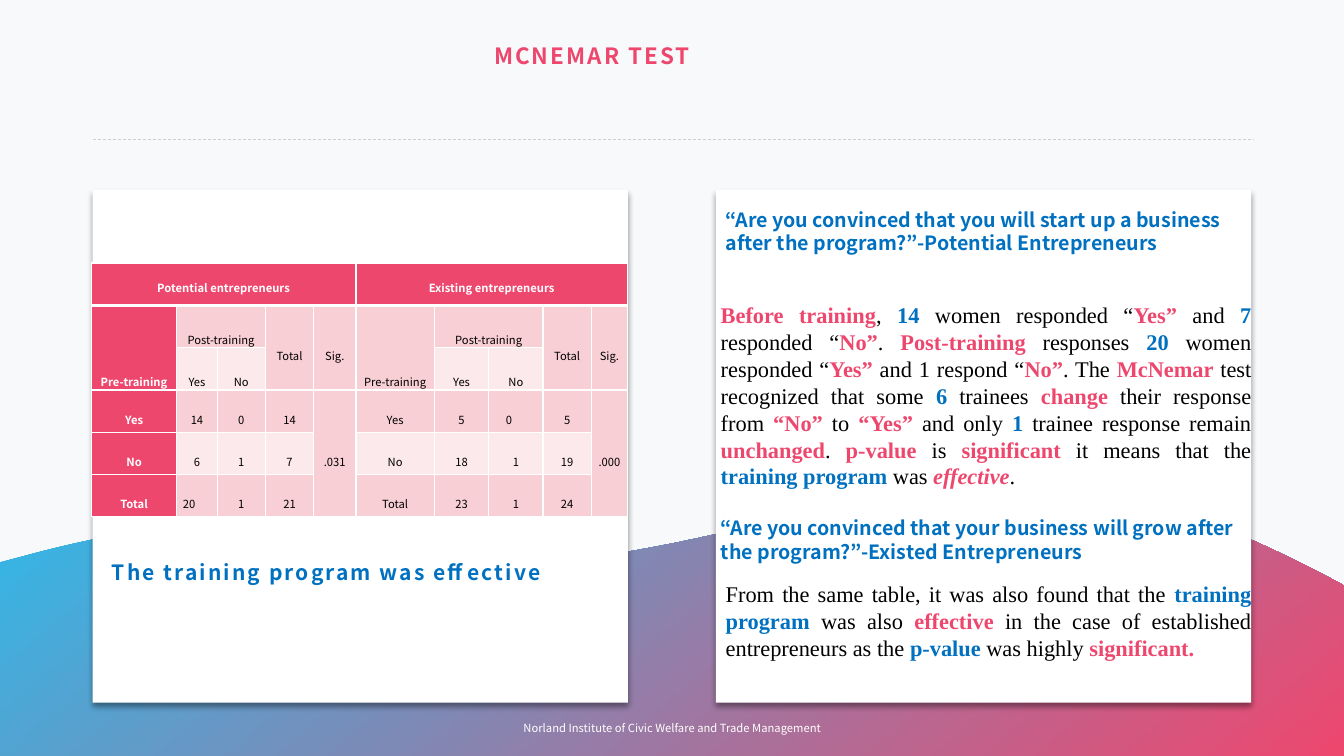
from dataclasses import dataclass

from lxml import etree
from pptx import Presentation
from pptx import util as u
from pptx.dml.color import RGBColor
from pptx.enum import dml, shapes, text
from pptx.oxml import parse_xml
from pptx.oxml.ns import nsdecls, qn


@dataclass(frozen=True)
class Theme:
    sans: str = "Noto Sans CJK JP"
    serif: str = "Times New Roman"
    pink: str = "EE476E"
    blue: str = "0070C0"
    sky: str = "2DBAEA"
    rose: str = "F8CFD5"
    blush: str = "FCE9EB"
    white: str = "FFFFFF"
    black: str = "000000"
    rule: str = "D0CECE"
    backdrop: str = "F8F9FB"
    small: int = 8
    heading: int = 14
    callout: int = 15
    large: int = 16


THEME = Theme()
WIDTH, HEIGHT = u.Inches(13.33), u.Inches(7.5)
ALIGN = text.PP_ALIGN
ANCHOR = text.MSO_ANCHOR

CARD_LEFTS = (6.9, 53.26)
WAVE_START = (0, 74.4)
WAVE_CURVES = [
    ((1.13, 73.87), (5.21, 71.87), (10.43, 69.73), (15.15, 69.47)),
    ((15.15, 69.47), (22.73, 68.93), (30.68, 75.07), (41.11, 74.13)),
    ((41.11, 74.13), (52.14, 73.07), (67.22, 62.53), (77.64, 63.73)),
    ((77.64, 63.73), (85.52, 64.53), (94.07, 71.87), (99.47, 76.93)),
]
WAVE_END = [(100, 77.47), (100, 100), (0, 100)]

COLUMNS = (0.85, 0.4, 0.48, 0.48, 0.42, 0.78, 0.54, 0.54, 0.48, 0.36)
RESULTS = [
    ["Potential entrepreneurs", *[""] * 4, "Existing entrepreneurs", *[""] * 4],
    ["Pre-training", "Post-training", "", "Total", "Sig."] * 2,
    ["", "Yes", "No", "", ""] * 2,
    ["Yes", "14", "0", "14", ".031", "Yes", "5", "0", "5", ".000"],
    ["No", "6", "1", "7", "", "No", "18", "1", "19", ""],
    ["Total", "20", "1", "21", "", "Total", "23", "1", "24", ""],
]
HALF_SPANS = [(0, 0, 0, 4), (1, 0, 2, 0), (1, 1, 1, 2),
              (1, 3, 2, 3), (1, 4, 2, 4), (3, 4, 5, 4)]
LEFT_INSETS = {(3, 7): 0.17, (5, 1): 0.06}

POTENTIAL_QUESTION = ("“Are you convinced that you will start up a business "
                      "after the program?”-Potential Entrepreneurs")
EXISTED_QUESTION = ("“Are you convinced that your business will grow after "
                    "the program?”-Existed Entrepreneurs")
POTENTIAL_FINDING = (
    "*Before training*, *#14* women responded “*Yes”* and *#7* responded “*No”*. "
    "*Post-training* responses *#20* women responded “*Yes”* and 1 respond “*No”*. "
    "The *McNemar* test recognized that some *#6* trainees *change* their response "
    "from *“No” *to *“Yes” *and only *#1* trainee response remain *unchanged*. "
    "*p-value *is *significant* it means that the *#training program *was "
    "*/effective*.")
EXISTED_FINDING = (
    "From the same table, it was also found that the *#training program *was also "
    "*effective* in the case of established entrepreneurs as the *#p-value* was "
    "highly *significant.*")


def color(value):
    return RGBColor.from_string(value)


def point(x, y):
    return round(WIDTH * x / 100), round(HEIGHT * y / 100)


def area(x, y, width, height):
    return *point(x, y), *point(width, height)


def write(frame, words, size, ink=THEME.black, font=THEME.sans, bold=False,
          align=ALIGN.LEFT, anchor=ANCHOR.TOP, before=0, after=0, spacing=None,
          tracking=None):
    frame.word_wrap = True
    frame.vertical_anchor = anchor
    paragraph = frame.paragraphs[0]
    paragraph.alignment = align
    paragraph.space_before, paragraph.space_after = u.Pt(before), u.Pt(after)
    paragraph.line_spacing = spacing
    for index, piece in enumerate(words.split("*")):
        if not piece:
            continue
        marked = index % 2 == 1
        run = paragraph.add_run()
        run.text = piece.lstrip("#/")
        run.font.name, run.font.size = font, u.Pt(size)
        run.font.bold = bold or marked
        run.font.italic = piece.startswith("/")
        accent = THEME.blue if piece.startswith("#") else THEME.pink
        run.font.color.rgb = color(accent if marked else ink)
        if tracking:
            run.font._element.set("spc", str(round(tracking * 100)))
    return paragraph


def add_text(slide, box, words, size, **style):
    write(slide.shapes.add_textbox(*area(*box)).text_frame, words, size, **style)


def fill_placeholder(shape, box, words, size, **style):
    shape.left, shape.top, shape.width, shape.height = area(*box)
    shape.text_frame.auto_size = text.MSO_AUTO_SIZE.NONE
    paragraph = write(shape.text_frame, words, size, bold=True, before=15,
                      tracking=1.5, **style)
    properties = paragraph._p.get_or_add_pPr()
    properties.set("marL", "0")
    properties.set("indent", "0")
    etree.SubElement(properties, qn("a:buNone"))
    shape._element.getparent().append(shape._element)


def add_wave(slide):
    outline = [
        tuple(a * (1 - t) ** 3 + 3 * b * t * (1 - t) ** 2
              + 3 * c * t ** 2 * (1 - t) + d * t ** 3 for a, b, c, d in zip(*curve))
        for curve in WAVE_CURVES for t in (step / 24 for step in range(25))
    ]
    builder = slide.shapes.build_freeform(*point(*WAVE_START))
    builder.add_line_segments([point(*spot) for spot in outline + WAVE_END])
    wave = builder.convert_to_shape()
    wave.shadow.inherit = False
    wave.line.fill.background()
    wave.fill.gradient()
    wave.fill.gradient_angle = 310
    for stop, tint in zip(wave.fill.gradient_stops, (THEME.sky, THEME.pink)):
        stop.color.rgb = color(tint)


def add_card(slide, left):
    card = slide.shapes.add_shape(shapes.MSO_SHAPE.RECTANGLE,
                                  *area(left, 25.07, 39.83, 67.87))
    card.fill.solid()
    card.fill.fore_color.rgb = color(THEME.white)
    card.line.fill.background()
    card._element.spPr.append(parse_xml(
        f'<a:effectLst {nsdecls("a")}><a:outerShdw blurRad="{u.Pt(4)}" '
        f'dist="{u.Pt(3)}" dir="5400000" algn="t" rotWithShape="0">'
        f'<a:srgbClr val="{THEME.black}"><a:alpha val="40000"/></a:srgbClr>'
        '</a:outerShdw></a:effectLst>'))


def add_rule(slide):
    rule = slide.shapes.add_connector(shapes.MSO_CONNECTOR.STRAIGHT,
                                      *point(6.9, 18.4), *point(93.25, 18.4))
    rule.line.color.rgb = color(THEME.rule)
    rule.line.width = u.Pt(0.5)
    rule.line.dash_style = dml.MSO_LINE.DASH
    etree.SubElement(rule._element.spPr, qn("a:effectLst"))


def format_cell(cell, words, row, column):
    header = row == 0 or column == 0
    thick = {0: "lnB", 1: "lnT"}.get(row)
    for side in ("lnL", "lnR", "lnT", "lnB"):
        cell._tc.get_or_add_tcPr().append(parse_xml(
            f'<a:{side} {nsdecls("a")} w="{u.Pt(3 if side == thick else 1)}">'
            f'<a:solidFill><a:srgbClr val="{THEME.white}"/></a:solidFill></a:{side}>'))
    cell.fill.solid()
    cell.fill.fore_color.rgb = color(
        THEME.pink if header else THEME.rose if row % 2 else THEME.blush)
    inset = LEFT_INSETS.get((row, column))
    cell.margin_left, cell.margin_right = u.Inches(inset or 0.06), u.Inches(0.06)
    cell.margin_top = cell.margin_bottom = 0
    low = row in (1, 2) and words not in ("Total", "Sig.")
    anchor = ANCHOR.TOP if row == 0 else ANCHOR.BOTTOM if low else ANCHOR.MIDDLE
    write(cell.text_frame, words, THEME.small, bold=header,
          ink=THEME.white if header else THEME.black,
          align=ALIGN.LEFT if inset else ALIGN.CENTER,
          before=6, after=6, spacing=2.0)
    cell.vertical_anchor = anchor


def add_results(slide):
    box = area(6.8, 34.8, 39.91, 33.6)
    table = slide.shapes.add_table(len(RESULTS), len(COLUMNS), *box).table
    table.first_row = table.horz_banding = False
    for column, share in zip(table.columns, COLUMNS):
        column.width = round(box[2] * share / sum(COLUMNS))
    for row, entries in enumerate(RESULTS):
        for column, words in enumerate(entries):
            format_cell(table.cell(row, column), words, row, column)
    for half in (0, 5):
        for top, left, bottom, right in HALF_SPANS:
            table.cell(top, left + half).merge(table.cell(bottom, right + half))


def main():
    presentation = Presentation()
    presentation.slide_width, presentation.slide_height = WIDTH, HEIGHT
    slide = presentation.slides.add_slide(presentation.slide_layouts[1])
    slide.background.fill.solid()
    slide.background.fill.fore_color.rgb = color(THEME.backdrop)
    title, conclusion = slide.placeholders
    add_wave(slide)
    for left in CARD_LEFTS:
        add_card(slide, left)
    add_rule(slide)
    fill_placeholder(title, (36.01, 4.67, 19.2, 5.47), "MCNEMAR TEST", THEME.large,
                     ink=THEME.pink, anchor=ANCHOR.MIDDLE)
    add_results(slide)
    add_text(slide, (33.16, 94.67, 33.76, 3.33),
             "Norland Institute of Civic Welfare and Trade Management", THEME.small,
             ink=THEME.white, align=ALIGN.CENTER, anchor=ANCHOR.MIDDLE)
    for box, question in (((53.26, 26.8, 40.58, 10.8), POTENTIAL_QUESTION),
                          ((52.89, 67.6, 40.96, 7.6), EXISTED_QUESTION)):
        add_text(slide, box, question, THEME.heading, ink=THEME.blue, bold=True)
    for box, finding in (((53.26, 76.13, 40.58, 12.13), EXISTED_FINDING),
                         ((52.89, 39.2, 40.96, 26.53), POTENTIAL_FINDING)):
        add_text(slide, box, finding, THEME.large, font=THEME.serif,
                 align=ALIGN.JUSTIFY, before=6, after=6)
    fill_placeholder(conclusion, (7.58, 71.73, 39.08, 12.53),
                     "The training program was effective", THEME.callout,
                     ink=THEME.blue, spacing=1.5)
    presentation.save("out.pptx")


if __name__ == "__main__":
    main()
